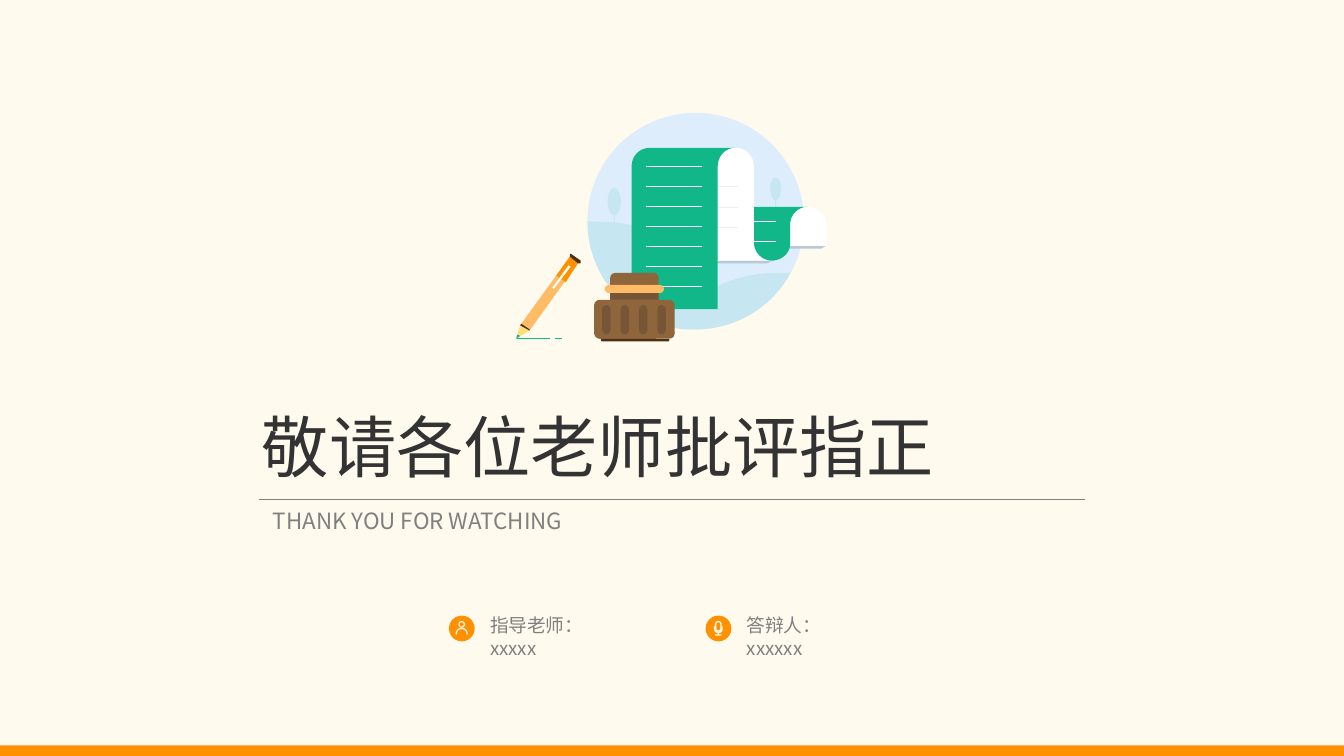
from lxml.etree import SubElement
from pptx import Presentation
from pptx.dml.color import RGBColor
from pptx.enum.shapes import MSO_CONNECTOR, MSO_SHAPE
from pptx.enum.text import MSO_ANCHOR, PP_ALIGN
from pptx.oxml.ns import qn
from pptx.util import Pt

FONT = "Noto Sans CJK SC"
CREAM, WHITE, ORANGE, PEACH = "FEFAEE", "FFFFFF", "FF9101", "FFBC66"
GREEN, SKY, HILL, SHADOW, RULE = "12B789", "DEEDFB", "C6E6F2", "B7C8D6", "EEEEEE"
BROWN, DARK_BROWN, INK, YELLOW = "8F653B", "775638", "502E11", "FDE176"
TITLE_GRAY, GRAY = "333333", "808080"


def color(hex_string):
    return RGBColor.from_string(hex_string)


def paint(shape, fill):
    shape.shadow.inherit = False
    shape.line.fill.background()
    if fill:
        shape.fill.solid()
        shape.fill.fore_color.rgb = color(fill)
    else:
        shape.fill.background()


def add_preset(shapes, kind, left, top, width, height, fill, adjustment=None):
    shape = shapes.add_shape(kind, Pt(left), Pt(top), Pt(width), Pt(height))
    if adjustment is not None:
        shape.adjustments[0] = adjustment
    paint(shape, fill)
    return shape


def add_line(shapes, left, right, y, line_color):
    connector = shapes.add_connector(MSO_CONNECTOR.STRAIGHT, Pt(left), Pt(y), Pt(right), Pt(y))
    connector.line.color.rgb = color(line_color)
    connector.line.width = Pt(0.5)
    SubElement(connector._element.spPr, qn("a:effectLst"))


def flatten(steps, segments=12):
    """Turn (x, y) corners and six-number cubic curves into plain points."""
    points = [steps[0]]
    for step in steps[1:]:
        if len(step) == 2:
            points.append(step)
            continue
        start = points[-1]
        controls = (start, step[:2], step[2:4], step[4:])
        for index in range(1, segments + 1):
            t = index / segments
            weights = ((1 - t) ** 3, 3 * t * (1 - t) ** 2, 3 * t * t * (1 - t), t ** 3)
            points.append(tuple(sum(w * c[axis] for w, c in zip(weights, controls))
                                for axis in (0, 1)))
    return points


def add_outline(shapes, left, top, steps, fill):
    points = [(Pt(left + x), Pt(top + y)) for x, y in flatten(steps)]
    builder = shapes.build_freeform(*points[0])
    builder.add_line_segments(points[1:], close=True)
    paint(builder.convert_to_shape(), fill)


def add_tree(shapes, left, top, width, height):
    outline = [(1, .37), (1, .26, .9, 0, .5, 0), (.1, 0, 0, .26, 0, .37),
               (0, .48, .1, .7, .45, .74), (.45, 1), (.55, 1), (.55, .74),
               (.9, .7, 1, .48, 1, .37)]
    steps = [tuple(value * (height if index % 2 else width)
                   for index, value in enumerate(step)) for step in outline]
    add_outline(shapes, left, top, steps, HILL)


def add_scenery(shapes, left, top):
    add_preset(shapes, MSO_SHAPE.OVAL, left + 38.2, top, 116, 116, SKY)
    add_outline(shapes, left, top, [
        (141.1, 85.7), (128.9, 85.7, 118.1, 87.8, 108, 92.9),
        (95, 72, 72, 58.3, 45.4, 58.3), (38.2, 58.3),
        (38.2, 85.7, 56.9, 108, 82.1, 114.5), (86.4, 116, 91.4, 116, 95.8, 116),
        (103, 116, 110.2, 114.5, 116.6, 112.3),
        (129.6, 107.3, 140.4, 97.9, 146.9, 85.7)], HILL)
    add_tree(shapes, left + 49, top + 40.3, 7.2, 19.5)
    add_tree(shapes, left + 136.1, top + 34.6, 5.8, 16.5)


def add_pencil(shapes, left, top):
    for start, end in ((0.7, 18), (20.9, 24.5)):
        add_line(shapes, left + start, left + end, top + 121, GREEN)
    parts = [
        ([(7.2, 116.6), (2.2, 113.8), (28.8, 77), (33.1, 80.6)], PEACH),
        ([(26.6, 90.7), (21.6, 87.1), (28.8, 77), (33.1, 80.6)], ORANGE),
        ([(20.2, 94.3), (19.4, 93.6), (28.1, 81.7), (29.2, 82.4)], WHITE),
        ([(34.6, 80.6), (33.1, 80.6), (28.8, 77), (28.8, 75.6), (29.5, 75.6),
          (34.6, 79.2)], INK),
        ([(0, 121), (2.2, 113.8), (7.2, 116.6)], YELLOW),
        ([(7.2, 115.9), (2.9, 113), (2.2, 113.8), (7.2, 116.6)], INK),
        ([(0.7, 118.8), (0, 121), (2.2, 119.5)], GREEN)]
    for steps, fill in parts:
        add_outline(shapes, left, top, steps, fill)


def add_scroll(shapes, left, top):
    def sheet(steps, fill):
        add_outline(shapes, left, top, steps, fill)

    def rules(start, end, heights, line_color):
        for height in heights:
            add_line(shapes, left + start, left + end, top + height, line_color)

    for x, y in ((108, 79.2), (136.8, 71.3)):
        sheet([(x, y + 1.4), (x + 26.6, y + 1.4), (x + 29, y), (x, y)], SHADOW)
    sheet([(156.2, 50.4), (127.4, 50.4), (127.4, 69.8),
           (127.4, 74.9, 131.8, 79.2, 136.8, 79.2),
           (142.6, 79.2, 146.9, 74.9, 146.9, 69.8), (146.9, 59.8),
           (146.9, 54.7, 151.2, 50.4, 156.2, 50.4)], GREEN)
    sheet([(156.2, 50.4), (151.2, 50.4, 146.9, 54.7, 146.9, 59.8), (146.9, 71.3),
           (166.3, 71.3), (166.3, 59.8), (166.3, 54.7, 162, 50.4, 156.2, 50.4)], WHITE)
    rules(109.4, 139, (58.3, 69.1), WHITE)
    sheet([(127.4, 69.8), (127.4, 28.8), (127.4, 23, 123.1, 18.7, 117.4, 18.7),
           (112.3, 18.7, 108, 23, 108, 28.8), (108, 79.2), (136.8, 79.2),
           (131.8, 79.2, 127.4, 74.9, 127.4, 69.8)], WHITE)
    rules(89.3, 118.8, (39.6, 50.4, 61.2), RULE)
    sheet([(117.4, 18.7), (72, 18.7), (66.2, 18.7, 61.9, 23, 61.9, 28.8), (61.9, 105.1),
           (108, 105.1), (108, 28.8), (108, 23, 112.3, 18.7, 117.4, 18.7)], GREEN)
    rules(69.8, 99.4, [28.8 + 10.68 * row for row in range(7)], WHITE)


def add_ink_bottle(shapes, left, top):
    grooves = [(46.1 + 9.85 * column, 103, 4.5, 15.6, DARK_BROWN, 0.5) for column in range(4)]
    parts = [(50.4, 85.7, 26, 17.6, BROWN, 0.15), (47.5, 92.2, 31.7, 4.3, PEACH, 0.5),
             (41.8, 100.1, 43.2, 20.9, BROWN, 0.14), *grooves,
             (45.4, 121, 36.7, 1.4, INK, 0.5)]
    for x, y, width, height, fill, rounding in parts:
        add_preset(shapes, MSO_SHAPE.ROUNDED_RECTANGLE, left + x, top + y,
                   width, height, fill, rounding)
    add_preset(shapes, MSO_SHAPE.RECTANGLE, left + 50.4, top + 96.5, 26, 3.6, DARK_BROWN)


def add_illustration(slide, left, top):
    shapes = slide.shapes.add_group_shape().shapes
    for add_part in (add_scenery, add_pencil, add_scroll, add_ink_bottle):
        add_part(shapes, left, top)


def add_person(shapes, left, top):
    add_preset(shapes, MSO_SHAPE.DONUT, left + 5.05, top + 2.9, 3.6, 3.6, CREAM, 0.18)
    add_outline(shapes, left, top, [
        (10.1, 10.1), (9.4, 10.1), (9.4, 8.2, 8.3, 7.2, 6.85, 7.2),
        (5.4, 7.2, 4.3, 8.2, 4.3, 10.1), (3.6, 10.1), (3.6, 7.9, 5, 6.5, 6.85, 6.5),
        (8.7, 6.5, 10.1, 7.9, 10.1, 10.1)], CREAM)


def add_microphone(shapes, left, top):
    capsule = add_preset(shapes, MSO_SHAPE.ROUNDED_RECTANGLE, left + 5.4, top + 3.2,
                         2.9, 5.1, None, 0.5)
    capsule.line.color.rgb = color(CREAM)
    capsule.line.width = Pt(0.7)
    add_outline(shapes, left, top, [
        (9.2, 5.8), (9.2, 7), (9.2, 9, 8, 9.3, 7.2, 9.4), (7.2, 10.1), (8.6, 10.1),
        (8.6, 10.8), (5.1, 10.8), (5.1, 10.1), (6.5, 10.1), (6.5, 9.4),
        (5.7, 9.3, 4.5, 9, 4.5, 7), (4.5, 5.8), (5.2, 5.8), (5.2, 7),
        (5.2, 9.2, 8.5, 9.2, 8.5, 7), (8.5, 5.8)], CREAM)


def set_text(shape, text, size, text_color, alignment=PP_ALIGN.LEFT):
    shape.text_frame.word_wrap = True
    paragraph = shape.text_frame.paragraphs[0]
    paragraph.text = text
    paragraph.alignment = alignment
    font = paragraph.runs[0].font
    font.size, font.name = Pt(size), FONT
    font.color.rgb = color(text_color)
    SubElement(font._element, qn("a:ea")).set("typeface", FONT)


def add_credit(slide, left, top, width, text, add_symbol):
    shapes = slide.shapes.add_group_shape().shapes
    add_preset(shapes, MSO_SHAPE.OVAL, left, top + 4.3, 13.8, 13.8, ORANGE)
    add_symbol(shapes, left, top + 4.3)
    box = slide.shapes.add_textbox(Pt(left + 15), Pt(top), Pt(width), Pt(20))
    set_text(box, text, 10, GRAY)
    box.text_frame.margin_right = Pt(12)  # moves the name to the second line


def add_heading(slide, left, top, width):
    title = slide.shapes.add_textbox(Pt(left - 5.8), Pt(top), Pt(width + 11.6), Pt(51))
    set_text(title, "敬请各位老师批评指正", 36, TITLE_GRAY, PP_ALIGN.JUSTIFY)
    subtitle = add_preset(slide.shapes, MSO_SHAPE.ROUNDED_RECTANGLE,
                          left, top + 56.9, width, 15.8, None, 0)
    set_text(subtitle, "THANK YOU FOR WATCHING", 12, GRAY, PP_ALIGN.JUSTIFY)
    subtitle.text_frame.vertical_anchor = MSO_ANCHOR.MIDDLE
    add_line(slide.shapes, left, left + width, top + 54, GRAY)


def main():
    presentation = Presentation()
    presentation.slide_width, presentation.slide_height = Pt(720), Pt(405)
    slide = presentation.slides.add_slide(presentation.slide_layouts[6])
    slide.background.fill.solid()
    slide.background.fill.fore_color.rgb = color(CREAM)
    add_illustration(slide, 276.5, 60.5)
    add_credit(slide, 240.5, 325.5, 90, "指导老师：xxxxx", add_person)
    add_credit(slide, 378, 325.5, 85, "答辩人：xxxxxx", add_microphone)
    add_preset(slide.shapes, MSO_SHAPE.RECTANGLE, 0, 399.4, 720, 5.6, ORANGE)
    add_heading(slide, 139, 213.8, 442)
    presentation.save("out.pptx")


if __name__ == "__main__":
    main()
